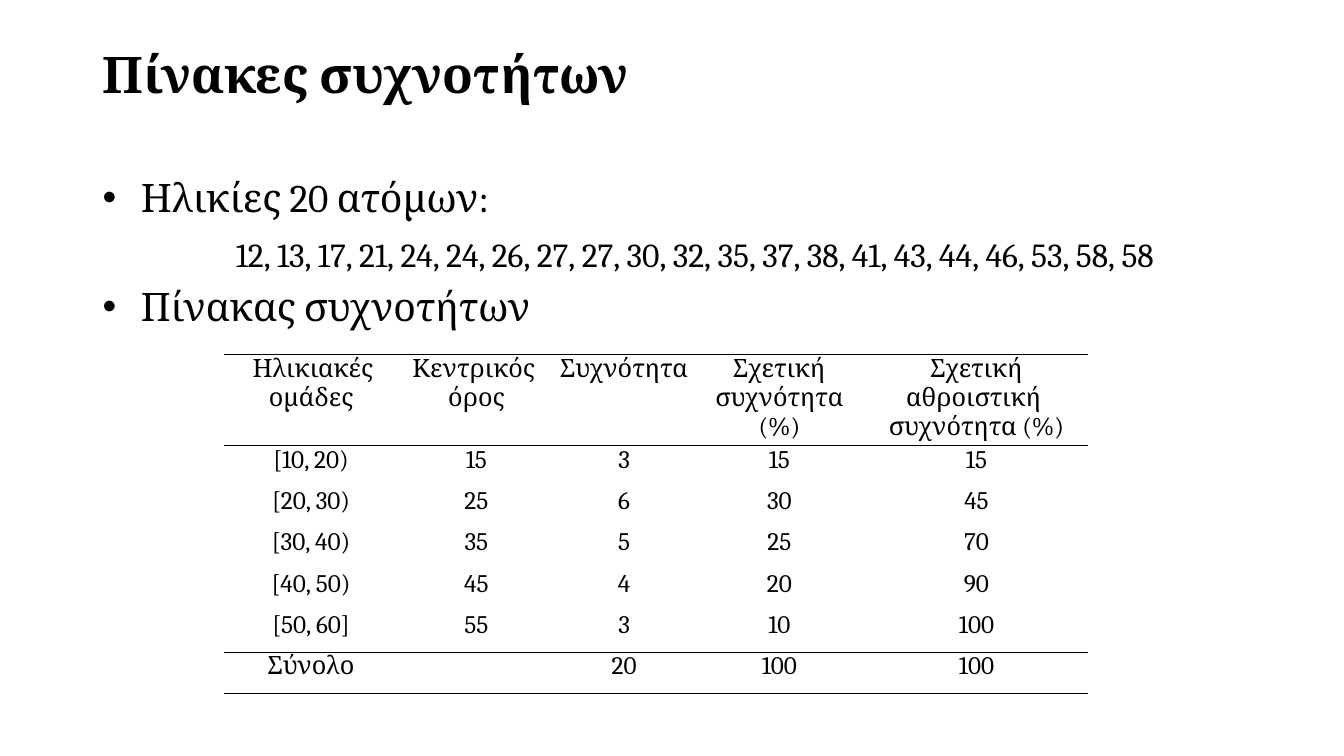
from lxml import etree
from pptx import Presentation
from pptx.dml.color import RGBColor
from pptx.enum.text import MSO_ANCHOR, PP_ALIGN
from pptx.oxml.ns import qn
from pptx.util import Inches, Pt

FONT, INK = "Cambria", "000000"
TITLE = "Πίνακες συχνοτήτων"
AGES = "12, 13, 17, 21, 24, 24, 26, 27, 27, 30, 32, 35, 37, 38, 41, 43, 44, 46, 53, 58, 58"
BULLET = {"size": 28, "space_before": Pt(5.6)}
AGE_LIST = {"size": 24, "space_before": Pt(6.8), "line_spacing": Pt(31.9),
            "alignment": PP_ALIGN.CENTER, "level": 1}
BODY = [
    # text, format, left margin, first-line indent, bullet
    ("Ηλικίες 20 ατόμων:", BULLET, 0.38, -0.38, "•"),
    (AGES, AGE_LIST, 0.44, 0, None),
    ("Πίνακας συχνοτήτων", BULLET, 0.38, -0.38, "•"),
]
FREQUENCIES = [
    ["Ηλικιακές \nομάδες", "Κεντρικός \nόρος", "Συχνότητα",
     "Σχετική\nσυχνότητα (%)", "Σχετική αθροιστική \nσυχνότητα (%)"],
    ["[10, 20)", "15", "3", "15", "15"],
    ["[20, 30)", "25", "6", "30", "45"],
    ["[30, 40)", "35", "5", "25", "70"],
    ["[40, 50)", "45", "4", "20", "90"],
    ["[50, 60]", "55", "3", "10", "100"],
    ["Σύνολο", "", "20", "100", "100"],
]
COLUMNS = [1.73, 1.55, 1.38, 1.7, 2.21]
HEADER_HEIGHT, ROW_HEIGHT = 0.7, 0.41
LEFT, WIDTH = 0.92, 11.5
TABLE_LEFT, TABLE_TOP = 2.22, 3.52


def color(value):
    return RGBColor.from_string(value)


def style(paragraph, size, bold=False, **formats):
    for name, value in formats.items():
        setattr(paragraph, name, value)
    for font in [paragraph.font] + [run.font for run in paragraph.runs]:
        font.name, font.size, font.bold = FONT, Pt(size), bold
        font.color.rgb = color(INK)


def indent(paragraph, margin, first=0, bullet=None):
    props = paragraph._p.get_or_add_pPr()
    props.set("marL", str(Inches(margin)))
    props.set("indent", str(Inches(first)))
    if bullet:
        mark_font = etree.Element(qn("a:buFont"), typeface="Arial")
        mark = etree.Element(qn("a:buChar"), char=bullet)
        defaults = props.find(qn("a:defRPr"))
        defaults.addprevious(mark_font)
        defaults.addprevious(mark)


def rule(cell, ruled_sides):
    """Draw black lines on the given sides and clear the others."""
    props = cell._tc.get_or_add_tcPr()
    for place, side in enumerate("LRTB"):
        line = etree.Element(qn(f"a:ln{side}"), w=str(Pt(1)))
        if side in ruled_sides:
            fill = etree.SubElement(line, qn("a:solidFill"))
            etree.SubElement(fill, qn("a:srgbClr"), val=INK)
        else:
            etree.SubElement(line, qn("a:noFill"))
        props.insert(place, line)


def text_frame(slide, top, height, anchor):
    box = slide.shapes.add_textbox(Inches(LEFT), Inches(top), Inches(WIDTH), Inches(height))
    frame = box.text_frame
    frame.word_wrap, frame.vertical_anchor = True, anchor
    return frame


def add_frequencies(slide):
    rows, last = len(FREQUENCIES), len(FREQUENCIES) - 1
    heights = [HEADER_HEIGHT] + [ROW_HEIGHT] * last
    table = slide.shapes.add_table(
        rows, len(COLUMNS), Inches(TABLE_LEFT), Inches(TABLE_TOP),
        Inches(sum(COLUMNS)), Inches(sum(heights))).table
    table.first_row = table.horz_banding = False
    for column, width in zip(table.columns, COLUMNS):
        column.width = Inches(width)
    ruled = {0: "TB", 1: "T", last - 1: "B", last: "TB"}
    for r, values in enumerate(FREQUENCIES):
        table.rows[r].height = Inches(heights[r])
        for c, value in enumerate(values):
            cell = table.cell(r, c)
            cell.text = value
            for side in ("left", "right", "top", "bottom"):
                setattr(cell, f"margin_{side}", 0)
            cell.fill.background()
            rule(cell, ruled.get(r, ""))
            for paragraph in cell.text_frame.paragraphs:
                style(paragraph, 18, alignment=PP_ALIGN.CENTER)
    indent(table.cell(0, 0).text_frame.paragraphs[0], 0.09)


def main():
    deck = Presentation()
    deck.slide_width, deck.slide_height = Inches(13.33), Inches(7.5)
    slide = deck.slides.add_slide(deck.slide_layouts[6])

    heading = text_frame(slide, 0, 1.45, MSO_ANCHOR.MIDDLE)
    heading.text = TITLE
    style(heading.paragraphs[0], 36, bold=True)

    body = text_frame(slide, 1.67, 5.67, MSO_ANCHOR.TOP)
    body.text = "\n".join(item[0] for item in BODY)
    for paragraph, (_, formats, margin, first, bullet) in zip(body.paragraphs, BODY):
        style(paragraph, **formats)
        indent(paragraph, margin, first, bullet)

    add_frequencies(slide)
    deck.save("out.pptx")


if __name__ == "__main__":
    main()
